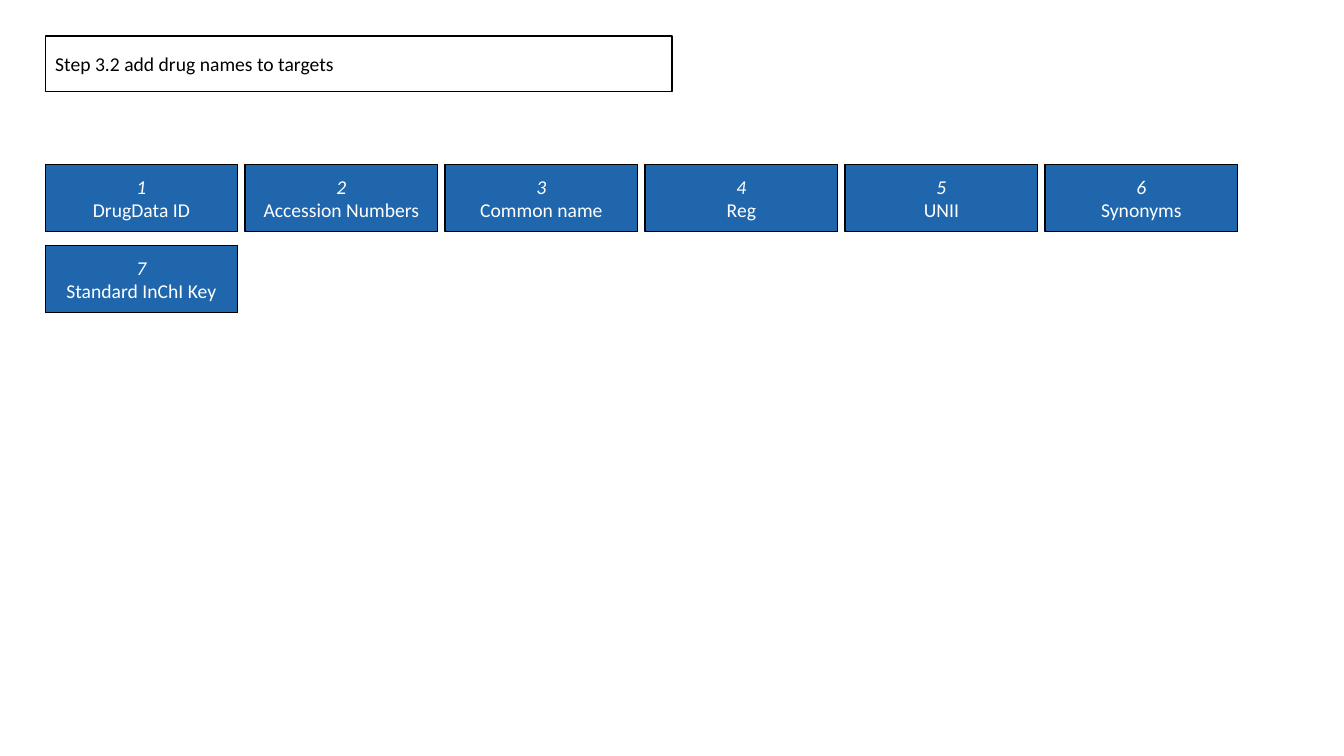
import dataclasses
import typing

import pptx
import pptx.dml.color
import pptx.enum.shapes
import pptx.enum.text
import pptx.util

Cm = pptx.util.Cm
RGB = pptx.dml.color.RGBColor
Align = pptx.enum.text.PP_ALIGN

BLACK = RGB(0x00, 0x00, 0x00)
WHITE = RGB(0xFF, 0xFF, 0xFF)
BLUE = RGB(0x20, 0x66, 0xAC)

FONT = {"name": "Calibri", "size": pptx.util.Pt(14), "bold": False}
FRAME = {
    "word_wrap": True,
    "auto_size": pptx.enum.text.MSO_AUTO_SIZE.NONE,
    "vertical_anchor": pptx.enum.text.MSO_ANCHOR.MIDDLE,
    "margin_left": Cm(0.25),
    "margin_right": Cm(0.25),
    "margin_top": Cm(0.13),
    "margin_bottom": Cm(0.13),
}

# Grid of field boxes, in centimetres
LEFT, TOP = 1.14, 4.14
WIDE, HIGH = 4.85, 1.7
STEP_X, STEP_Y = 5.04, 2.04
COLS = 6


@dataclasses.dataclass(frozen=True)
class Field:
    num: int
    name: str


NAMES = ["DrugData ID", "Accession Numbers", "Common name", "Reg", "UNII",
         "Synonyms", "Standard InChI Key"]
FIELDS = [Field(num, name) for num, name in enumerate(NAMES, 1)]


def apply(item: typing.Any, values: dict[str, typing.Any]) -> None:
    for key, value in values.items():
        setattr(item, key, value)


def outline(shape: typing.Any) -> None:
    shape.line.color.rgb = BLACK
    shape.line.width = pptx.util.Pt(1)


def write(para: typing.Any, text: str, color: RGB, align: Align,
          italic: bool = False) -> None:
    para.alignment = align
    run = para.add_run()
    run.text = text
    apply(run.font, FONT | {"italic": italic})
    run.font.color.rgb = color


def add_title(slide: typing.Any, text: str) -> None:
    title = slide.shapes.title
    apply(title, {"left": Cm(LEFT), "top": Cm(0.91),
                  "width": Cm(15.8), "height": Cm(1.4)})
    outline(title)
    apply(title.text_frame, FRAME)
    write(title.text_frame.paragraphs[0], text, BLACK, Align.LEFT)


def add_field(slide: typing.Any, field: Field) -> None:
    row, col = divmod(field.num - 1, COLS)
    box = slide.shapes.add_shape(
        pptx.enum.shapes.MSO_SHAPE.RECTANGLE,
        Cm(LEFT + col * STEP_X), Cm(TOP + row * STEP_Y), Cm(WIDE), Cm(HIGH))
    box.name = f"Field {field.num}"
    box.shadow.inherit = False
    box.fill.solid()
    box.fill.fore_color.rgb = BLUE
    outline(box)
    frame = box.text_frame
    apply(frame, FRAME)
    write(frame.paragraphs[0], str(field.num), WHITE, Align.CENTER, italic=True)
    write(frame.add_paragraph(), field.name, WHITE, Align.CENTER)


def main() -> None:
    deck = pptx.Presentation()
    apply(deck, {"slide_width": Cm(33.87), "slide_height": Cm(19.05)})
    slide = deck.slides.add_slide(deck.slide_layouts.get_by_name("Title Only"))

    # Step heading
    add_title(slide, "Step 3.2 add drug names to targets")

    # Numbered fields
    for field in FIELDS:
        add_field(slide, field)

    deck.save("out.pptx")


if __name__ == "__main__":
    main()
